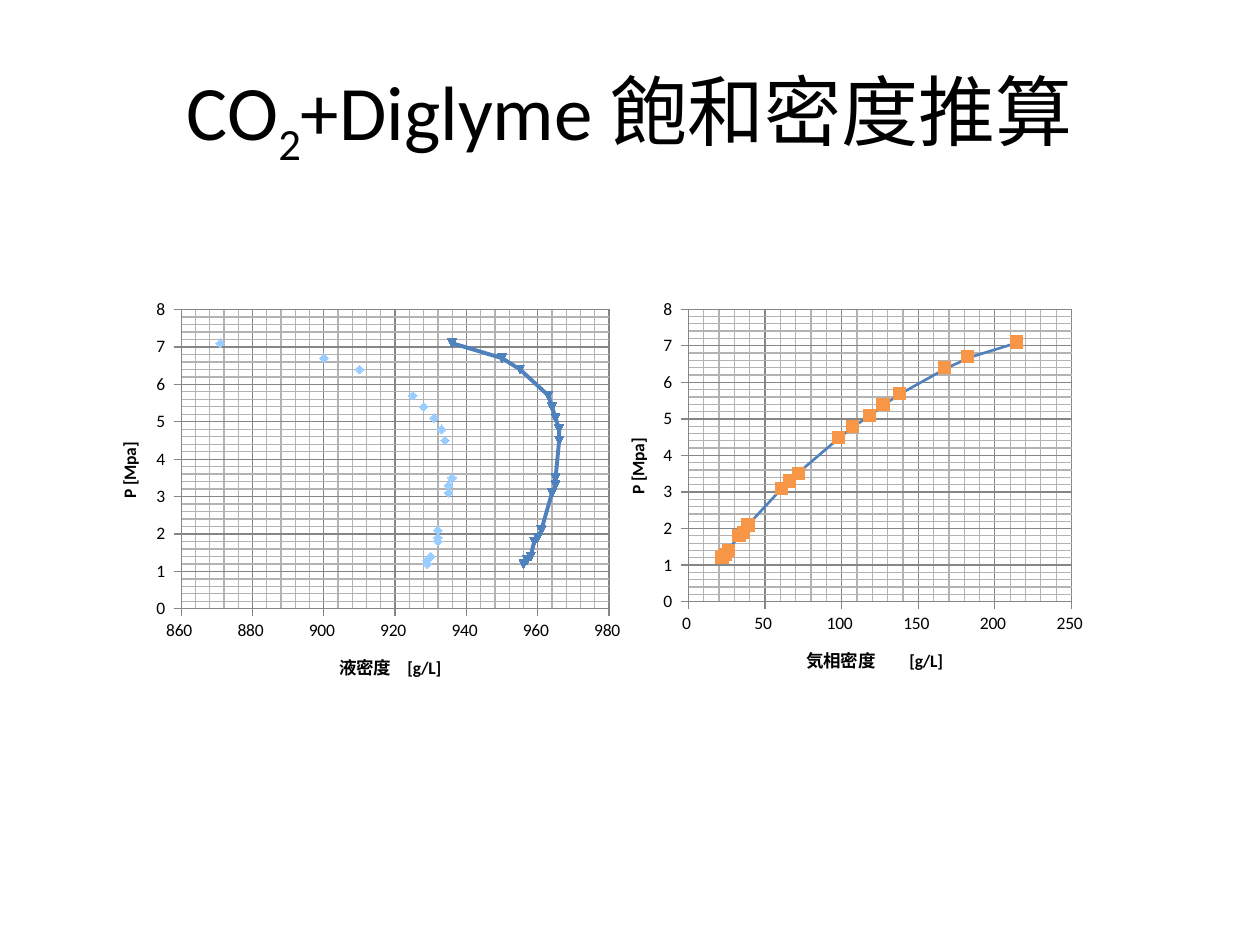
from pptx import Presentation
from pptx.chart.data import XyChartData
from pptx.dml.color import RGBColor
from pptx.enum.chart import XL_CHART_TYPE, XL_MARKER_STYLE, XL_TICK_LABEL_POSITION, XL_TICK_MARK
from pptx.enum.text import MSO_ANCHOR, PP_ALIGN
from pptx.oxml import parse_xml
from pptx.oxml.ns import nsdecls, qn
from pptx.util import Inches, Pt

SCATTER = XL_CHART_TYPE.XY_SCATTER
AUTOMATIC, DIAMOND = XL_MARKER_STYLE.AUTOMATIC, XL_MARKER_STYLE.DIAMOND
NO_MARKER, SQUARE = XL_MARKER_STYLE.NONE, XL_MARKER_STYLE.SQUARE
LOW, OUTSIDE, NO_TICK = XL_TICK_LABEL_POSITION.LOW, XL_TICK_MARK.OUTSIDE, XL_TICK_MARK.NONE
MIDDLE, CENTER = MSO_ANCHOR.MIDDLE, PP_ALIGN.CENTER

PRESSURE = (1.2, 1.3, 1.4, 1.8, 1.9, 2.1, 3.1, 3.3, 3.5, 4.5, 4.8, 5.1, 5.4, 5.7, 6.4, 6.7, 7.1)
LIQUID_POINTS = (929, 929, 930, 932, 932, 932, 935, 935, 936, 934, 933, 931, 928, 925, 910, 900, 871)
LIQUID_CURVE = (956, 957, 958, 959, 960, 961, 964, 965, 965, 966, 966, 965, 964, 963, 955, 950, 936)
VAPOUR_POINTS = (22, 24, 26, 33, 36, 39, 61, 66, 72, 98, 107, 118, 127, 138, 167, 182, 214)
VAPOUR_CURVE = (21, 23, 26, 33, 35, 39, 61, 66, 71, 99, 108, 119, 128, 139, 169, 185, 216)


def color(value):
    """Turn a hex string into a colour."""
    return RGBColor.from_string(value)


class DensitySlide:
    """Style and element methods of the density slide."""

    font, ink, accent = "Calibri", "000000", "4F81BD"
    major_grid, minor_grid = "868686", "B3B3B3"

    def __init__(self, presentation):
        """Add a title-only slide."""
        self.width, self.height = presentation.slide_width, presentation.slide_height
        self.slide = presentation.slides.add_slide(presentation.slide_layouts[5])

    def box(self, left, top, width, height):
        """Turn shares of the slide into lengths."""
        return (int(left * self.width), int(top * self.height),
                int(width * self.width), int(height * self.height))

    def style(self, font, size, bold=False):
        """Apply the common type style."""
        font.name, font.size, font.bold = self.font, Pt(size), bold
        font.color.rgb = color(self.ink)

    def title(self, runs, box):
        """Fill the title from (text, baseline) runs."""
        shape = self.slide.shapes.title
        shape.left, shape.top, shape.width, shape.height = self.box(*box)
        shape.text_frame.vertical_anchor = MIDDLE
        paragraph = shape.text_frame.paragraphs[0]
        paragraph.alignment = CENTER
        for text, baseline in runs:
            run = paragraph.add_run()
            run.text = text
            self.style(run.font, 44)
            if baseline:
                run.font._element.set("baseline", str(baseline))

    def axis(self, axis, title, limits, major, rotation=0):
        """Scale an axis and draw its title and grids."""
        axis.minimum_scale, axis.maximum_scale = limits
        axis.major_unit, axis.minor_unit = major, major / 5
        axis.has_major_gridlines = axis.has_minor_gridlines = True
        for lines in (axis.major_gridlines, axis):
            lines.format.line.color.rgb = color(self.major_grid)
            lines.format.line.width = Pt(0.75)
        axis._element.find(qn("c:minorGridlines")).append(parse_xml(
            f'<c:spPr {nsdecls("c", "a")}><a:ln w="{Pt(0.75)}"><a:solidFill>'
            f'<a:srgbClr val="{self.minor_grid}"/></a:solidFill></a:ln></c:spPr>'))
        axis.major_tick_mark, axis.minor_tick_mark = OUTSIDE, NO_TICK
        axis.tick_label_position = LOW
        axis.tick_labels.number_format = "0_ "
        axis.tick_labels.number_format_is_linked = False
        self.style(axis.tick_labels.font, 10)
        frame = axis.axis_title.text_frame
        frame._txBody.bodyPr.set("rot", str(rotation * 60000))
        run = frame.paragraphs[0].add_run()
        run.text = title
        self.style(run.font, 10, True)

    def points(self, series, symbol, size, fill):
        """Show a series as markers only."""
        series.smooth = False
        series.format.line.fill.background()
        self.marker(series.marker, symbol, size, fill)

    def curve(self, series, symbol, width, smooth):
        """Show a series as a line."""
        series.smooth = smooth
        series._element.find(qn("c:idx")).set("val", "2")
        series.format.line.color.rgb = color(self.accent)
        series.format.line.width = Pt(width)
        self.marker(series.marker, symbol, 5, self.accent)

    def marker(self, marker, symbol, size, fill):
        """Format the markers of a series."""
        marker.style, marker.size = symbol, size
        marker.format.fill.solid()
        marker.format.fill.fore_color.rgb = color(fill)
        marker.format.line.fill.background()

    def chart(self, box, plot_box, title, limits, major, points, curve):
        """Add a pressure-density scatter chart."""
        data = XyChartData()
        for name, densities in (("Series 1", points[0]), ("Series 2", curve[0])):
            series = data.add_series(name)
            for density, pressure in zip(densities, PRESSURE):
                series.add_data_point(density, pressure)
        chart = self.slide.shapes.add_chart(SCATTER, *self.box(*box), data).chart
        chart.has_legend = chart.has_title = False
        self.style(chart.font, 10)
        plot = chart.plots[0]
        plot.vary_by_categories = False
        markers, line = plot.series
        self.points(markers, *points[1:])
        self.curve(line, *curve[1:])
        self.axis(chart.category_axis, title, limits, major)
        self.axis(chart.value_axis, "P [Mpa]", (0, 8), 1, -90)
        self.layout(chart, plot_box)

    def layout(self, chart, plot_box):
        """Place the inner plot area by shares of the chart."""
        sizes = "".join(f'<c:{tag} val="{share}"/>' for tag, share in zip("xywh", plot_box))
        area = chart._chartSpace.chart.plotArea
        for old in area.findall(qn("c:layout")):
            area.remove(old)
        area.insert(0, parse_xml(
            f'<c:layout {nsdecls("c")}><c:manualLayout><c:layoutTarget val="inner"/>'
            f'<c:xMode val="edge"/><c:yMode val="edge"/>{sizes}</c:manualLayout></c:layout>'))


def main():
    """Build and save the slide."""
    presentation = Presentation()
    presentation.slide_width, presentation.slide_height = Inches(10), Inches(7.5)
    page = DensitySlide(presentation)
    page.title((("CO", 0), ("2", -25000), ("+Diglyme 飽和密度推算", 0)), (0.05, 0.04, 0.9, 1 / 6))
    page.chart((0.075, 0.31, 0.43, 0.44), (0.16, 0.04, 0.79, 0.72),
               "液密度　[g/L]", (860, 980), 20,
               (LIQUID_POINTS, DIAMOND, 5, "99CCFF"), (LIQUID_CURVE, AUTOMATIC, 2.25, True))
    page.chart((0.48, 0.31, 0.39, 0.43), (0.17, 0.04, 0.78, 0.72),
               "気相密度　　[g/L]", (0, 250), 50,
               (VAPOUR_POINTS, SQUARE, 7, "F79646"), (VAPOUR_CURVE, NO_MARKER, 1.5, False))
    presentation.save("out.pptx")


if __name__ == "__main__":
    main()
